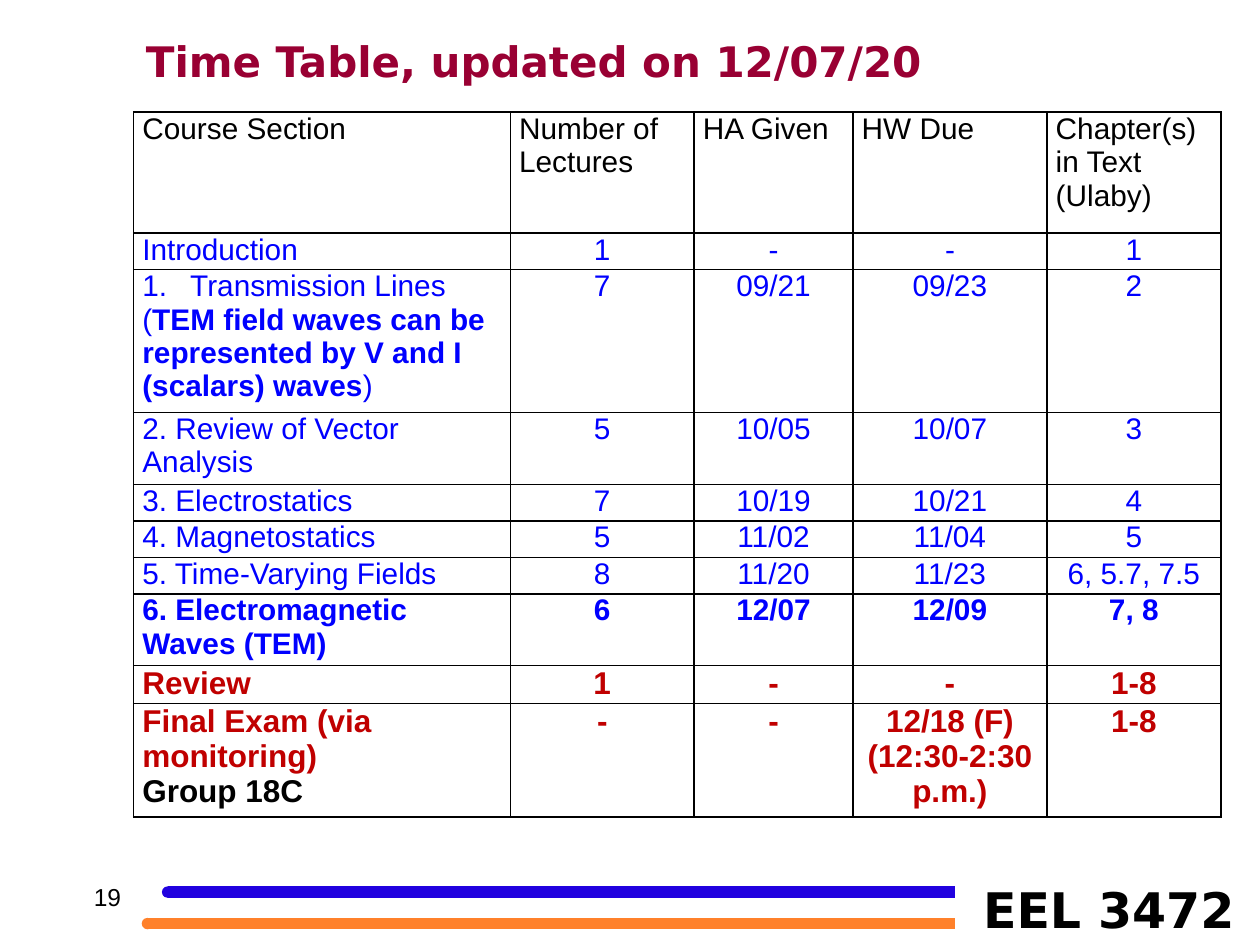
"""Build the course time table slide."""
from lxml.etree import SubElement
from pptx import Presentation
from pptx.dml.color import RGBColor
from pptx.enum.shapes import MSO_CONNECTOR, MSO_SHAPE
from pptx.enum.text import MSO_ANCHOR, PP_ALIGN
from pptx.oxml import parse_xml
from pptx.oxml.ns import nsdecls, qn
from pptx.util import Inches, Pt

THEME = {
    "title": {"name": "DejaVu Sans", "size": Pt(24), "bold": True, "color": "990033"},
    "course": {"name": "DejaVu Sans", "size": Pt(28), "bold": True, "color": "000000"},
    "number": {"name": "Arial", "size": Pt(14), "bold": False, "color": "000000"},
    "header": {"name": "Arial", "size": Pt(17), "bold": False, "color": "000000"},
    "section": {"name": "Arial", "size": Pt(17), "bold": False, "color": "0000FF"},
    "current": {"name": "Arial", "size": Pt(17), "bold": True, "color": "0000FF"},
    "exam": {"name": "Arial", "size": Pt(18), "bold": True, "color": "C00000"},
    "group": {"name": "Arial", "size": Pt(18), "bold": True, "color": "000000"},
    "blue_bar": "2101DF",
    "orange_bar": "FF812B",
    "border": "000000",
}


def add_run(paragraph, text, style):
    run = paragraph.add_run()
    run.text = text
    for attribute, value in THEME[style].items():
        if attribute == "color":
            run.font.color.rgb = RGBColor.from_string(value)
        else:
            setattr(run.font, attribute, value)


presentation = Presentation()
presentation.slide_width, presentation.slide_height = Inches(10), Inches(7.5)
slide = presentation.slides.add_slide(presentation.slide_layouts[6])

for left, middle, bar_color in [(1.33, 7.08, "blue_bar"), (1.17, 7.33, "orange_bar")]:
    color = RGBColor.from_string(THEME[bar_color])
    bar = slide.shapes.add_connector(
        MSO_CONNECTOR.STRAIGHT, Inches(left), Inches(middle), Inches(7.58), Inches(middle))
    bar.line.color.rgb = color
    bar.line.width = Pt(6.75)
    SubElement(bar._element.spPr, qn("a:effectLst"))
    cap = slide.shapes.add_shape(
        MSO_SHAPE.OVAL, Inches(left - 0.04), Inches(middle - 0.04), Inches(0.08), Inches(0.08))
    cap.shadow.inherit = False
    cap.fill.solid()
    cap.fill.fore_color.rgb = color
    cap.line.color.rgb = color
    cap.line.width = Pt(0.75)

labels = [
    ("Time Table, updated on 12/07/20", "title", PP_ALIGN.LEFT, (1.06, 0.23, 6.97, 0.5)),
    ("EEL 3472", "course", PP_ALIGN.CENTER, (7.6, 6.93, 2.4, 0.57)),
    ("19", "number", PP_ALIGN.RIGHT, (0.62, 6.95, 0.44, 0.42)),
]
for text, style, alignment, box in labels:
    label = slide.shapes.add_textbox(*[Inches(length) for length in box])
    label.text_frame.word_wrap = True
    paragraph = label.text_frame.paragraphs[0]
    paragraph.alignment = alignment
    add_run(paragraph, text, style)

transmission = [
    [("Transmission Lines", "section")],
    [("(", "section"),
     ("TEM field waves can be represented by V and I (scalars) waves", "current"),
     (")", "section")],
]
final_exam = [[("Final Exam (via monitoring)", "exam")], [("Group 18C", "group")]]
final_time = [[("12/18 (F)", "exam")], [("(12:30-2:30 p.m.)", "exam")]]
rows = [
    (0.96, "header", ["Course Section", "Number of Lectures", "HA Given", "HW Due",
                      "Chapter(s) in Text (Ulaby)"]),
    (0.29, "section", ["Introduction", "1", "-", "-", "1"]),
    (1.13, "section", [transmission, "7", "09/21", "09/23", "2"]),
    (0.57, "section", ["2. Review of Vector Analysis", "5", "10/05", "10/07", "3"]),
    (0.29, "section", ["3. Electrostatics", "7", "10/19", "10/21", "4"]),
    (0.29, "section", ["4. Magnetostatics", "5", "11/02", "11/04", "5"]),
    (0.29, "section", ["5. Time-Varying Fields", "8", "11/20", "11/23", "6, 5.7, 7.5"]),
    (0.57, "current", ["6. Electromagnetic Waves (TEM)", "6", "12/07", "12/09", "7, 8"]),
    (0.29, "exam", ["Review", "1", "-", "-", "1-8"]),
    (0.9, "exam", [final_exam, "-", "-", final_time, "1-8"]),
]
column_widths = [2.99, 1.46, 1.26, 1.54, 1.38]
cell_format = {
    "margin_left": Inches(0.07), "margin_right": Inches(0.07),
    "margin_top": 0, "margin_bottom": 0, "vertical_anchor": MSO_ANCHOR.TOP,
}

table = slide.shapes.add_table(
    len(rows), len(column_widths), Inches(1.06), Inches(0.89),
    Inches(sum(column_widths)), Inches(sum(row[0] for row in rows))).table
table.first_row = table.horz_banding = False
for column, width in zip(table.columns, column_widths):
    column.width = Inches(width)

for row_index, (height, style, contents) in enumerate(rows):
    table.rows[row_index].height = Inches(height)
    for column_index, content in enumerate(contents):
        cell = table.cell(row_index, column_index)
        for attribute, value in cell_format.items():
            setattr(cell, attribute, value)
        cell.fill.background()
        for position, side in enumerate(["lnL", "lnR", "lnT", "lnB"]):
            cell._tc.tcPr.insert(position, parse_xml(
                f'<a:{side} {nsdecls("a")} w="{Pt(1)}"><a:solidFill>'
                f'<a:srgbClr val="{THEME["border"]}"/></a:solidFill></a:{side}>'))
        centered = row_index > 0 and column_index > 0
        lines = [[(content, style)]] if isinstance(content, str) else content
        for line_index, line in enumerate(lines):
            frame = cell.text_frame
            paragraph = frame.add_paragraph() if line_index else frame.paragraphs[0]
            paragraph.alignment = PP_ALIGN.CENTER if centered else PP_ALIGN.LEFT
            for text, run_style in line:
                add_run(paragraph, text, run_style)

properties = table.cell(2, 0).text_frame.paragraphs[0]._p.get_or_add_pPr()
properties.set("marL", str(Inches(0.38)))
properties.set("indent", str(Inches(-0.38)))
SubElement(properties, qn("a:buFont"), typeface="+mj-lt")
SubElement(properties, qn("a:buAutoNum"), type="arabicPeriod")

presentation.save("out.pptx")
